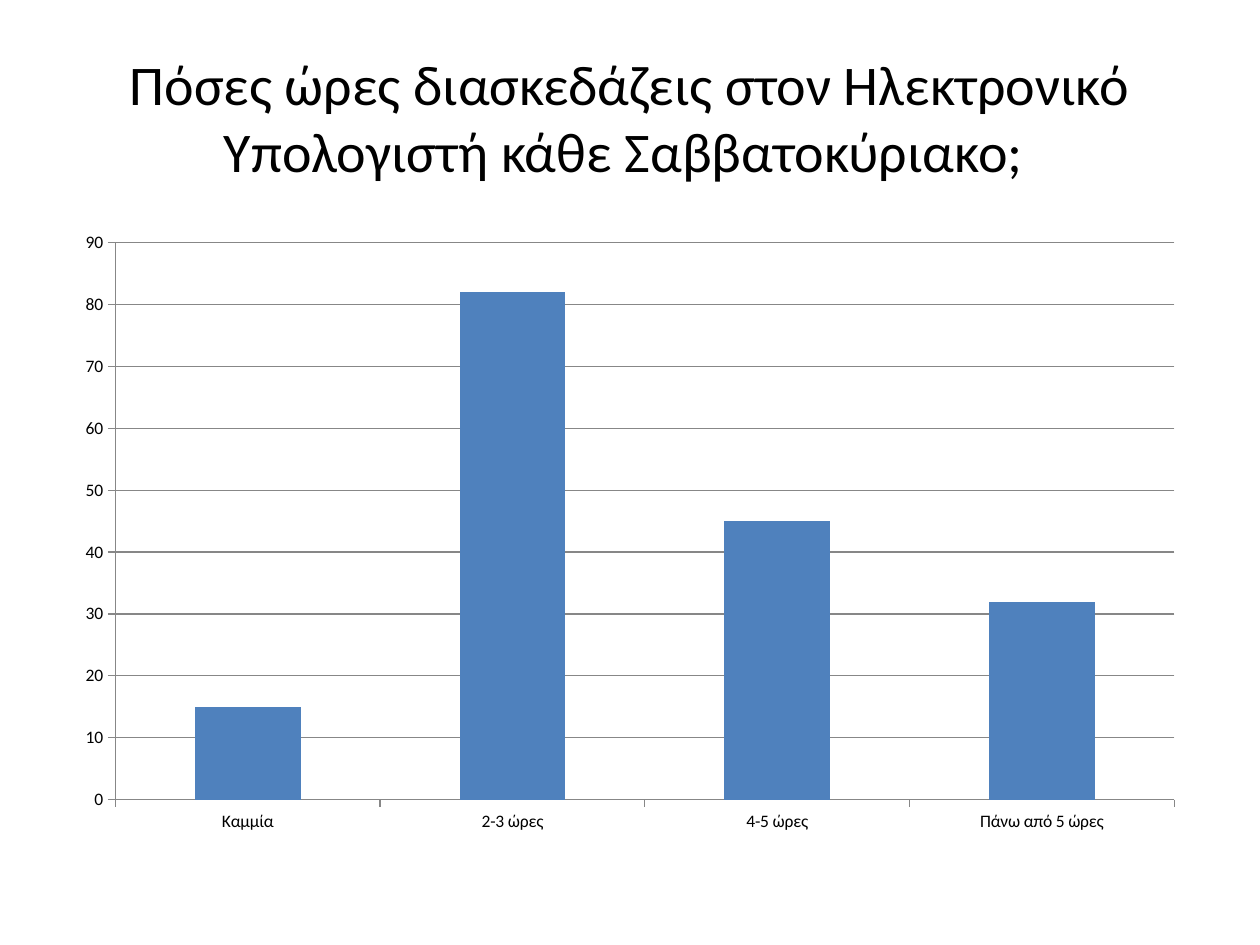
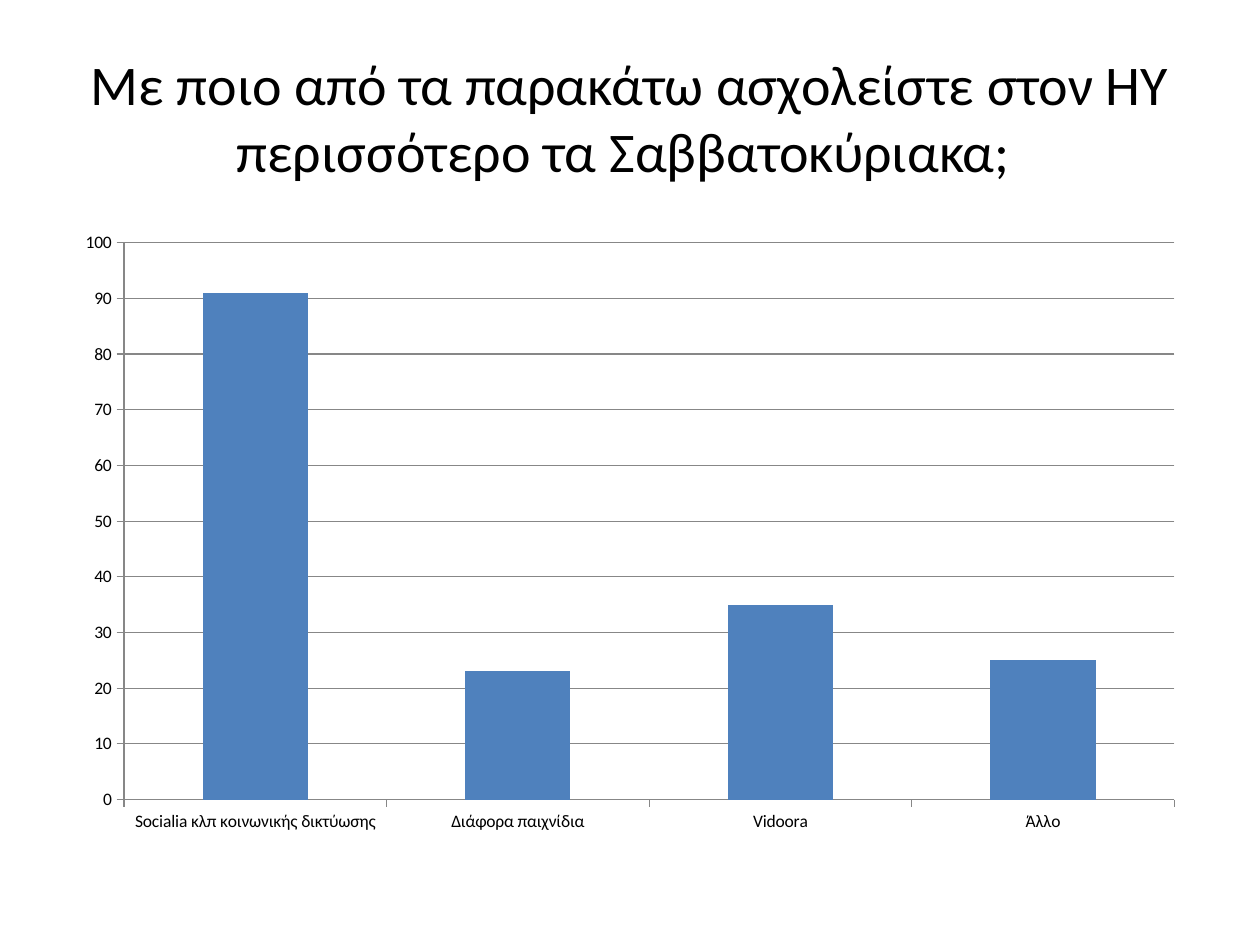
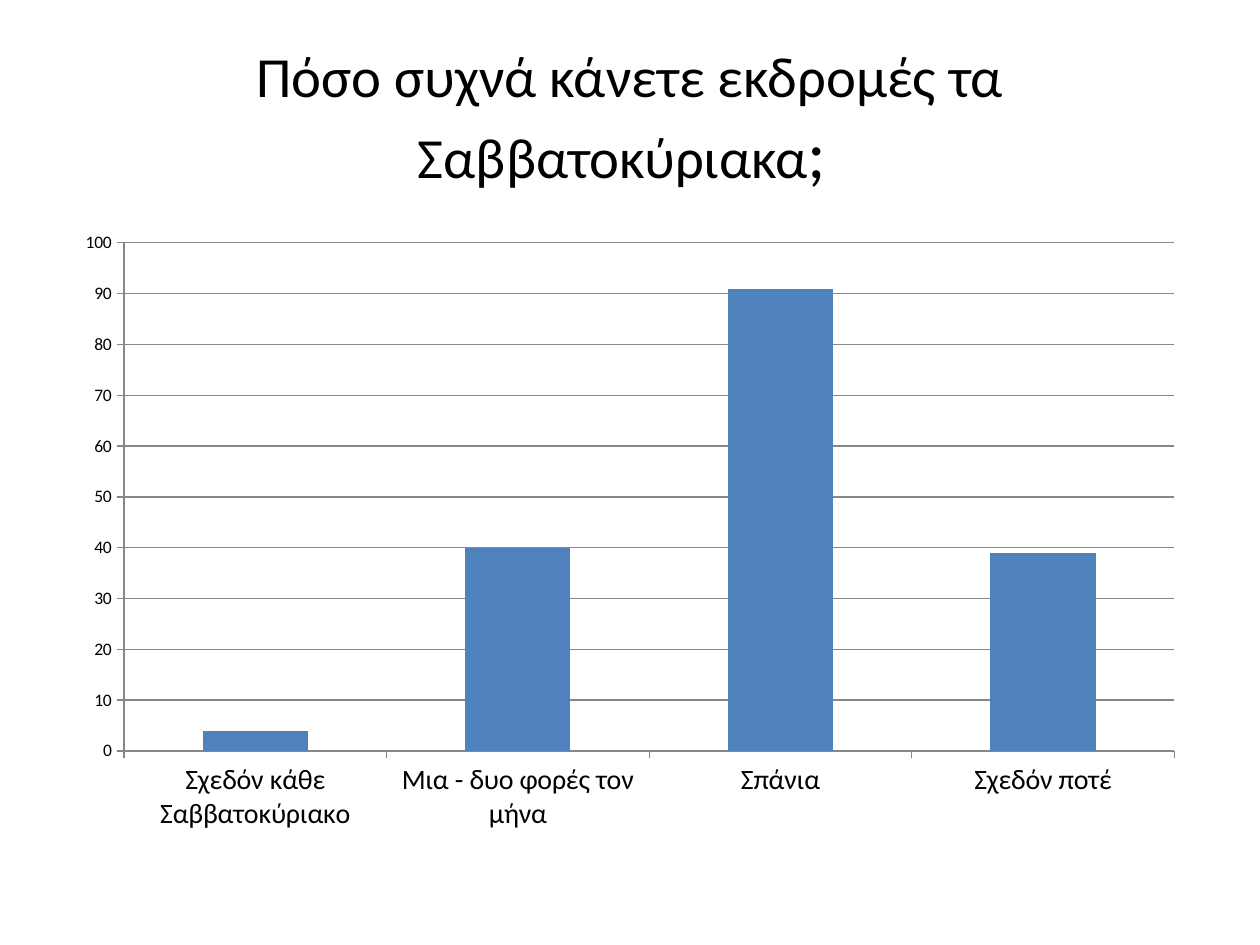
"""Build three survey slides, each with a question and a column chart of answers."""
from dataclasses import dataclass

from pptx import Presentation
from pptx.chart import data as chart_data
from pptx.dml import color
from pptx.enum import chart as chart_enum, text
from pptx.util import Pt

SURVEY = [
    {
        "question": [("Πόσες ώρες διασκεδάζεις στον Ηλεκτρονικό Υπολογιστή κάθε Σαββατοκύριακο; ", 32)],
        "answers": {"Καμμία": 15, "2-3 ώρες": 82, "4-5 ώρες": 45, "Πάνω από 5 ώρες": 32},
        "axis_maximum": 90,
        "label_size": 10,
    },
    {
        "question": [("Με ποιο από τα παρακάτω ασχολείστε στον ΗΥ περισσότερο τα Σαββατοκύριακα; ", 32)],
        "answers": {"Socialia κλπ κοινωνικής δικτύωσης": 91, "Διάφορα παιχνίδια": 23,
                    "Vidoora": 35, "Άλλο": 25},
        "axis_maximum": 100,
        "label_size": 10,
    },
    {
        "question": [("Πόσο συχνά κάνετε εκδρομές τα Σαββατοκύριακα", 32.4), ("; ", 39.6)],
        "answers": {"Σχεδόν κάθε Σαββατοκύριακο": 4, "Μια - δυο φορές τον μήνα": 40,
                    "Σπάνια": 91, "Σχεδόν ποτέ": 39},
        "axis_maximum": 100,
        "label_size": 16,
    },
]


@dataclass(frozen=True)
class Theme:
    font: str = "Calibri"
    ink: color.RGBColor = color.RGBColor.from_string("000000")
    bar: color.RGBColor = color.RGBColor.from_string("4F81BD")
    rule: color.RGBColor = color.RGBColor.from_string("878787")
    paper: color.RGBColor = color.RGBColor.from_string("FFFFFF")
    chart_size: float = 10
    rule_width: float = 0.75


THEME = Theme()
SLIDE_WIDTH, SLIDE_HEIGHT, MARGIN = 720, 540, 36
CONTENT_WIDTH = SLIDE_WIDTH - 2 * MARGIN
TITLE_BOX = [Pt(n) for n in (MARGIN, 21.6, CONTENT_WIDTH, 90)]
CHART_BOX = [Pt(n) for n in (MARGIN, 126, CONTENT_WIDTH, 356.4)]


def style_font(font, size):
    font.name = THEME.font
    font.size = Pt(size)
    font.color.rgb = THEME.ink


def style_line(line):
    line.color.rgb = THEME.rule
    line.width = Pt(THEME.rule_width)


def add_question(slide, question):
    frame = slide.shapes.add_textbox(*TITLE_BOX).text_frame
    frame.word_wrap = True
    frame.vertical_anchor = text.MSO_ANCHOR.MIDDLE
    paragraph = frame.paragraphs[0]
    paragraph.alignment = text.PP_ALIGN.CENTER
    for words, size in question:
        run = paragraph.add_run()
        run.text = words
        style_font(run.font, size)


def add_answers(slide, answers, axis_maximum, label_size):
    table = chart_data.CategoryChartData()
    table.categories = list(answers)
    table.add_series("Series 1", list(answers.values()))
    chart = slide.shapes.add_chart(
        chart_enum.XL_CHART_TYPE.COLUMN_CLUSTERED, *CHART_BOX, table).chart
    chart.has_title = False
    chart.has_legend = False
    style_font(chart.font, THEME.chart_size)

    plot = chart.plots[0]
    plot.gap_width = 150
    plot.vary_by_categories = False
    fill = plot.series[0].format.fill
    fill.solid()
    fill.fore_color.rgb = THEME.bar

    for axis, size in ((chart.category_axis, label_size), (chart.value_axis, THEME.chart_size)):
        axis.major_tick_mark = chart_enum.XL_TICK_MARK.OUTSIDE
        axis.minor_tick_mark = chart_enum.XL_TICK_MARK.NONE
        style_line(axis.format.line)
        style_font(axis.tick_labels.font, size)
    value_axis = chart.value_axis
    value_axis.minimum_scale = 0
    value_axis.maximum_scale = axis_maximum
    value_axis.major_unit = 10
    value_axis.has_major_gridlines = True
    style_line(value_axis.major_gridlines.format.line)


def main():
    presentation = Presentation()
    presentation.slide_width = Pt(SLIDE_WIDTH)
    presentation.slide_height = Pt(SLIDE_HEIGHT)
    background = presentation.slide_master.background.fill
    background.solid()
    background.fore_color.rgb = THEME.paper
    for entry in SURVEY:
        slide = presentation.slides.add_slide(presentation.slide_layouts[6])
        add_question(slide, entry["question"])
        add_answers(slide, entry["answers"], entry["axis_maximum"], entry["label_size"])
    presentation.save("out.pptx")


if __name__ == "__main__":
    main()
